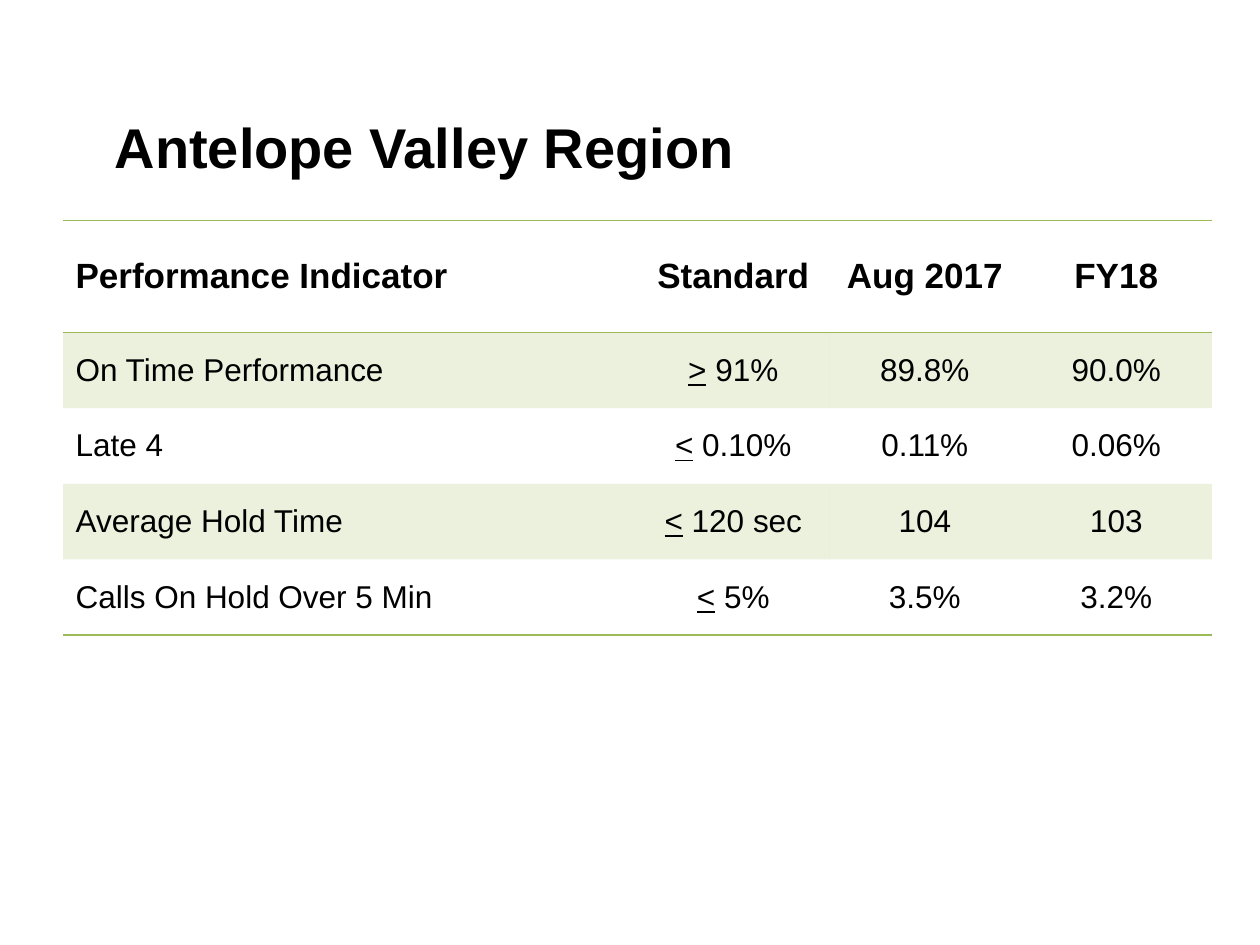
from lxml.etree import SubElement
from pptx import Presentation
from pptx.dml.color import RGBColor
from pptx.enum.text import MSO_ANCHOR, PP_ALIGN
from pptx.oxml.ns import qn
from pptx.util import Inches, Pt

TITLE = "Antelope Valley Region"
HEADS = ["Performance Indicator", "Standard", "Aug 2017", "FY18"]
ROWS = [
    ["On Time Performance", (">", " 91%"), "89.8%", "90.0%"],
    ["Late 4", ("<", " 0.10%"), "0.11%", "0.06%"],
    ["Average Hold Time", ("<", " 120 sec"), "104", "103"],
    ["Calls On Hold Over 5 Min", ("<", " 5%"), "3.5%", "3.2%"],
]
WIDTHS = [4.56, 1.52, 1.52, 1.52]
HEIGHTS = [0.89] + [0.6] * len(ROWS)
BLACK = RGBColor(0, 0, 0)
GREEN = RGBColor(0x9B, 0xBB, 0x59)
FONT = "Arial"
PLAIN = "{2D5ABB26-0587-4C30-8999-92F81FD0307C}"


def set_font(par, size, bold):
    font = par.font
    font.name, font.size, font.bold = FONT, Pt(size), bold
    font.color.rgb = BLACK


def add_rule(cell, side):
    line = SubElement(cell._tc.get_or_add_tcPr(), qn("a:ln" + side), w=str(Pt(1)))
    fill = SubElement(line, qn("a:solidFill"))
    SubElement(fill, qn("a:srgbClr"), val=str(GREEN))


def add_tint(cell):
    cell.fill.solid()
    cell.fill.fore_color.rgb = GREEN
    color = cell._tc.tcPr.find(qn("a:solidFill")).find(qn("a:srgbClr"))
    SubElement(color, qn("a:alpha"), val="20000")


def fill_cell(cell, text, row, col):
    cell.vertical_anchor = MSO_ANCHOR.MIDDLE
    par = cell.text_frame.paragraphs[0]
    par.alignment = PP_ALIGN.CENTER if col else PP_ALIGN.LEFT
    head = row == 0
    set_font(par, 20 if head else 18, head)
    if isinstance(text, tuple):
        sign, value = text
        run = par.add_run()
        run.text, run.font.underline = sign, True
        par.add_run().text = value
    else:
        par.add_run().text = text
    if head:
        add_rule(cell, "T")
    if row in (0, len(ROWS)):
        add_rule(cell, "B")
    if row % 2:
        add_tint(cell)
    else:
        cell.fill.background()


def main():
    deck = Presentation()
    deck.slide_width, deck.slide_height = Inches(10), Inches(7.5)
    slide = deck.slides.add_slide(deck.slide_layouts[5])

    title = slide.shapes.title
    title.left, title.top = Inches(0.81), Inches(0.84)
    title.width, title.height = Inches(8.39), Inches(0.64)
    title.text = TITLE
    title.text_frame.vertical_anchor = MSO_ANCHOR.MIDDLE
    par = title.text_frame.paragraphs[0]
    par.alignment = PP_ALIGN.LEFT
    set_font(par, 32, True)

    frame = slide.shapes.add_table(
        len(HEIGHTS), len(WIDTHS), Inches(0.5), Inches(1.75),
        Inches(sum(WIDTHS)), Inches(sum(HEIGHTS)))
    table = frame.table
    table.horz_banding = False
    table._tbl.tblPr.find(qn("a:tableStyleId")).text = PLAIN
    for col, width in zip(table.columns, WIDTHS):
        col.width = Inches(width)
    for row, height in zip(table.rows, HEIGHTS):
        row.height = Inches(height)
    for r, texts in enumerate([HEADS] + ROWS):
        for c, text in enumerate(texts):
            fill_cell(table.cell(r, c), text, r, c)

    deck.save("out.pptx")


if __name__ == "__main__":
    main()
